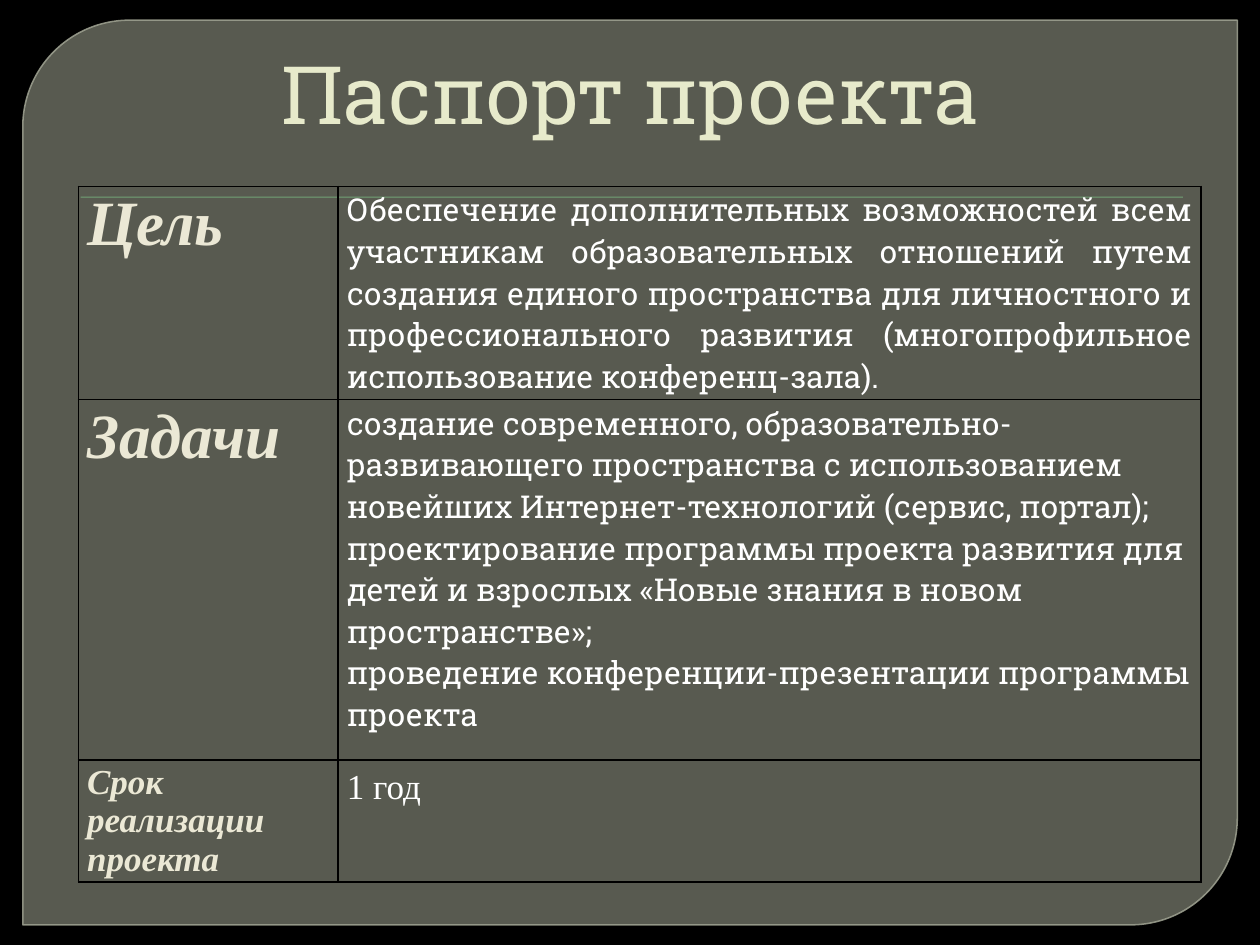
from dataclasses import dataclass

from lxml.etree import SubElement
from pptx import Presentation
from pptx.dml.color import RGBColor
from pptx.enum.shapes import MSO_SHAPE
from pptx.enum.text import MSO_ANCHOR, MSO_AUTO_SIZE, PP_ALIGN
from pptx.oxml import parse_xml
from pptx.oxml.ns import nsdecls, qn
from pptx.util import Pt


@dataclass(frozen=True)
class Theme:
    """Colours, fonts and type sizes of the slide."""
    background: str = "000000"
    panel: str = "888B7B"
    panel_edge: str = "9DA090"
    rule: str = "72A376"
    title: str = "E7EACB"
    label: str = "EBE8D5"
    body: str = "FFFFFF"
    border: str = "000000"
    slab: str = "Roboto Slab"
    serif: str = "Times New Roman"
    title_size: float = 46
    label_size: float = 36
    small_size: float = 20
    body_size: float = 18


THEME = Theme()
PASSPORT = [
    {
        "height": 119.5,
        "label": "Цель",
        "label_size": THEME.label_size,
        "body": ["Обеспечение дополнительных возможностей всем участникам "
                 "образовательных отношений путем создания единого пространства "
                 "для личностного и профессионального развития "
                 "(многопрофильное использование конференц-зала)."],
        "font": (THEME.slab, THEME.body_size),
        "paragraph": {"alignment": PP_ALIGN.JUSTIFY},
    },
    {
        "height": 206,
        "label": "Задачи",
        "label_size": THEME.label_size,
        "body": ["создание современного, образовательно-развивающего пространства "
                 "с использованием новейших Интернет-технологий (сервис, портал);",
                 "проектирование программы проекта развития для детей и взрослых "
                 "«Новые знания в новом пространстве»;",
                 "проведение конференции-презентации программы проекта"],
        "font": (THEME.slab, THEME.body_size),
        "paragraph": {"alignment": PP_ALIGN.LEFT},
    },
    {
        "height": 62.6,
        "label": "Срок реализации проекта",
        "label_size": THEME.small_size,
        "body": ["1 год"],
        "font": (THEME.serif, THEME.small_size),
        "paragraph": {"line_spacing": 1.15, "space_after": Pt(10)},
    },
]


def apply_format(target, values):
    """Set every attribute named in values on target."""
    for name, value in values.items():
        setattr(target, name, value)


def write_text(frame, lines, font, size, color, bold=False, paragraph_format=None):
    """Fill a text frame with one formatted paragraph per line."""
    for index, line in enumerate(lines):
        paragraph = frame.add_paragraph() if index else frame.paragraphs[0]
        apply_format(paragraph, paragraph_format or {})
        run = paragraph.add_run()
        run.text = line
        apply_format(run.font, {"name": font, "size": Pt(size), "bold": bold, "italic": bold})
        run.font.color.rgb = RGBColor.from_string(color)


def set_opacity(shape, opacities):
    """Give the solid colours of a shape, fill first, their opacity in percent."""
    colors = shape.element.spPr.iter(qn("a:srgbClr"))
    for color, opacity in zip(colors, opacities):
        SubElement(color, qn("a:alpha"), val=str(opacity * 1000))


def add_block(slide, kind, box, color):
    """Add a flat filled shape without outline."""
    block = slide.shapes.add_shape(kind, *map(Pt, box))
    block.shadow.inherit = False
    block.fill.solid()
    block.fill.fore_color.rgb = RGBColor.from_string(color)
    block.line.fill.background()
    return block


def add_backdrop(slide, box):
    """Place the rounded panel and the thin rule near its top."""
    left, top, width, height = box
    panel = add_block(slide, MSO_SHAPE.ROUND_2_DIAG_RECTANGLE, box, THEME.panel)
    panel.adjustments[0], panel.adjustments[1] = 0.118, 0
    panel.line.color.rgb = RGBColor.from_string(THEME.panel_edge)
    panel.line.width = Pt(0.87)
    set_opacity(panel, (65, 88))
    add_block(slide, MSO_SHAPE.RECTANGLE, (left + 33, top + 100.8, width - 64, 0.72), THEME.rule)


def add_title(slide, box, text):
    """Move the title placeholder into the box, in front of the backdrop."""
    title = slide.shapes.title
    slide.shapes.element.append(title.element)
    apply_format(title, dict(zip(("left", "top", "width", "height"), map(Pt, box))))
    apply_format(title.text_frame, {
        "auto_size": MSO_AUTO_SIZE.NONE,
        "vertical_anchor": MSO_ANCHOR.BOTTOM,
        "margin_left": Pt(11.5),
        "margin_bottom": Pt(1),
    })
    write_text(title.text_frame, [text], THEME.slab, THEME.title_size, THEME.title,
               paragraph_format={"alignment": PP_ALIGN.CENTER})


def format_cell(cell):
    """Make a cell transparent with thin borders and narrow margins."""
    apply_format(cell, {
        "margin_left": Pt(5), "margin_right": Pt(5),
        "margin_top": Pt(1.5), "margin_bottom": Pt(1.5),
        "vertical_anchor": MSO_ANCHOR.TOP,
    })
    cell.fill.background()
    properties = cell._tc.get_or_add_tcPr()
    for index, side in enumerate("LRTB"):
        properties.insert(index, parse_xml(
            f'<a:ln{side} {nsdecls("a")} w="{Pt(1)}"><a:solidFill>'
            f'<a:srgbClr val="{THEME.border}"/></a:solidFill></a:ln{side}>'))


def add_passport(slide, box, entries):
    """Build the two-column table of project details."""
    table = slide.shapes.add_table(len(entries), 2, *map(Pt, box)).table
    apply_format(table, {"first_row": False, "horz_banding": False})
    label_width = 148.5
    for column, width in zip(table.columns, (label_width, box[2] - label_width)):
        column.width = Pt(width)
    for row, entry in zip(table.rows, entries):
        row.height = Pt(entry["height"])
        label, body = row.cells
        format_cell(label)
        format_cell(body)
        write_text(label.text_frame, [entry["label"]], THEME.serif, entry["label_size"],
                   THEME.label, bold=True)
        write_text(body.text_frame, entry["body"], *entry["font"], THEME.body,
                   paragraph_format=entry["paragraph"])


def main():
    """Build and save the project passport slide."""
    deck = Presentation()
    apply_format(deck, {"slide_width": Pt(720), "slide_height": Pt(540)})
    slide = deck.slides.add_slide(deck.slide_layouts.get_by_name("Title Only"))
    slide.background.fill.solid()
    slide.background.fill.fore_color.rgb = RGBColor.from_string(THEME.background)
    add_backdrop(slide, (13, 11.5, 694, 517))
    add_title(slide, (34, 0, 648, 81.5), "Паспорт проекта")
    add_passport(slide, (44.75, 106.5, 641.5, 388.1), PASSPORT)
    deck.save("out.pptx")


if __name__ == "__main__":
    main()
